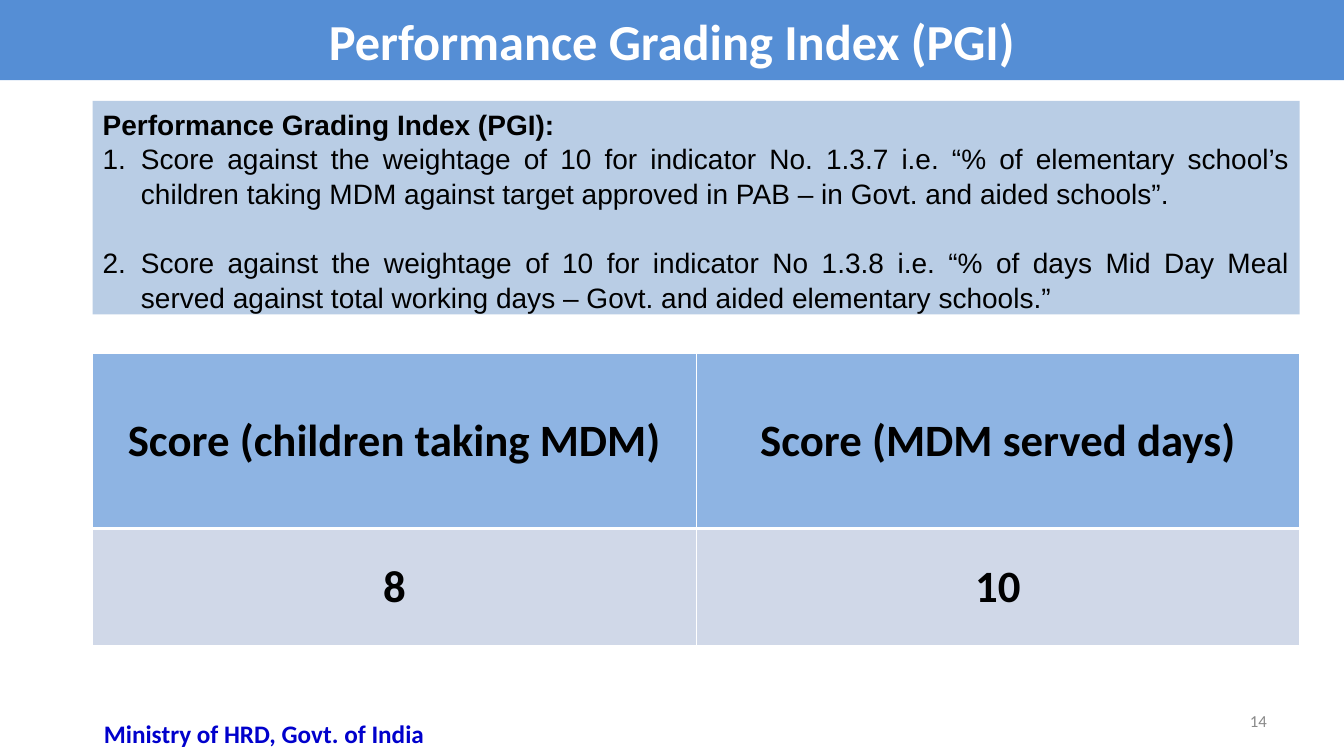
from lxml import etree
from pptx import Presentation
from pptx import util as u
from pptx.dml.color import RGBColor
from pptx.enum import shapes, text
from pptx.oxml import ns

COLORS = {
    "bar": "558ED5",
    "panel": "B9CDE5",
    "header": "8EB4E3",
    "score": "D0D8E8",
    "white": "FFFFFF",
    "black": "000000",
    "ministry": "0000CC",
    "page": "898989",
}
WIDTH, HEIGHT = u.Inches(13.33), u.Inches(7.5)
LEFT, SPAN = 6.9, 89.8  # shared by the panel and the table
ALIGN = text.PP_ALIGN
MIDDLE = text.MSO_ANCHOR.MIDDLE


class Board:
    """Draws on one slide; boxes are (left, top, width, height) in percent of it."""

    def __init__(self, slide):
        self.slide = slide

    def place(self, box):
        return [round(share * side / 100)
                for share, side in zip(box, (WIDTH, HEIGHT) * 2)]

    def add_words(self, paragraph, words, size, color="black", bold=True,
                  align=ALIGN.CENTER, font="Calibri"):
        paragraph.alignment = align
        run = paragraph.add_run()
        run.text = words
        run.font.name, run.font.size, run.font.bold = font, u.Pt(size), bold
        run.font.color.rgb = RGBColor.from_string(COLORS[color])

    def band(self, box, fill, anchor=text.MSO_ANCHOR.TOP):
        band = self.slide.shapes.add_shape(
            shapes.MSO_SHAPE.RECTANGLE, *self.place(box))
        band.shadow.inherit = False
        band.fill.solid()
        band.fill.fore_color.rgb = RGBColor.from_string(COLORS[fill])
        band.line.fill.background()
        band.text_frame.word_wrap = True
        band.text_frame.vertical_anchor = anchor
        return band.text_frame

    def label(self, box, words, size, color, anchor=text.MSO_ANCHOR.TOP, **style):
        frame = self.slide.shapes.add_textbox(*self.place(box)).text_frame
        frame.word_wrap = True
        frame.vertical_anchor = anchor
        self.add_words(frame.paragraphs[0], words, size, color, **style)

    def indicators(self, box, heading, items):
        frame = self.band(box, "panel")
        style = dict(size=20, align=ALIGN.JUSTIFY, font="Arial")
        self.add_words(frame.paragraphs[0], heading, **style)
        for number, item in enumerate(items, 1):
            paragraph = frame.add_paragraph()
            self.add_words(paragraph, item, bold=False, **style)
            paragraph.space_before = u.Pt(24 * (number - 1))
            self.number(paragraph, number)
        for paragraph in frame.paragraphs:
            paragraph.line_spacing = 1.04

    def number(self, paragraph, start):
        props = paragraph._p.get_or_add_pPr()
        indent = u.Inches(0.38)
        props.set("marL", str(indent))
        props.set("indent", str(-indent))
        etree.SubElement(props, ns.qn("a:buFont"), typeface="Arial")
        etree.SubElement(props, ns.qn("a:buAutoNum"),
                         type="arabicPeriod", startAt=str(start))

    def scores(self, box, rows, heights):
        table = self.slide.shapes.add_table(
            len(rows), len(rows[0]), *self.place(box)).table
        for r, (row, height) in enumerate(zip(rows, heights)):
            table.rows[r].height = round(height * HEIGHT / 100)
            for c, words in enumerate(row):
                cell = table.cell(r, c)
                cell.fill.solid()
                cell.fill.fore_color.rgb = RGBColor.from_string(
                    COLORS["score" if r else "header"])
                cell.vertical_anchor = MIDDLE
                cell.margin_left = cell.margin_right = cell.margin_top = u.Inches(0.01)
                cell.margin_bottom = 0
                self.add_words(cell.text_frame.paragraphs[0], words, 32)
                self.borders(cell, top=3 if r else 1, bottom=1 if r else 3)

    def borders(self, cell, top, bottom):
        props = cell._tc.get_or_add_tcPr()
        for place, (side, points) in enumerate(
                {"L": 1, "R": 1, "T": top, "B": bottom}.items()):
            line = etree.Element(ns.qn(f"a:ln{side}"), w=str(u.Pt(points)))
            fill = etree.SubElement(line, ns.qn("a:solidFill"))
            etree.SubElement(fill, ns.qn("a:srgbClr"), val=COLORS["white"])
            props.insert(place, line)


def main():
    deck = Presentation()
    deck.slide_width, deck.slide_height = WIDTH, HEIGHT
    board = Board(deck.slides.add_slide(deck.slide_layouts[6]))

    title = board.band((0, 0, 100, 10.6), "bar", MIDDLE)
    board.add_words(title.paragraphs[0], "Performance Grading Index (PGI)", 36, "white")
    board.scores(
        (LEFT, 46.8, SPAN, 38.6),
        [["Score (children taking MDM)", "Score (MDM served days)"], ["8", "10"]],
        (23.1, 15.5))
    board.indicators(
        (LEFT, 13.33, SPAN, 28.27),
        "Performance Grading Index (PGI): ",
        ["Score against the weightage of 10 for indicator No. 1.3.7 i.e. “% of "
         "elementary school’s children taking MDM against target approved in "
         "PAB – in Govt. and aided schools”.",
         "Score against the weightage of 10 for indicator No 1.3.8 i.e. “% of "
         "days Mid Day Meal served against total working days – Govt. and aided "
         "elementary schools.”"])
    board.label((71.7, 92.7, 23.3, 5.3), "14", 12, "page", MIDDLE,
                bold=False, align=ALIGN.RIGHT)
    board.label((4.95, 94.3, 29.4, 5.3), "Ministry of HRD, Govt. of India", 18, "ministry")
    deck.save("out.pptx")


if __name__ == "__main__":
    main()
